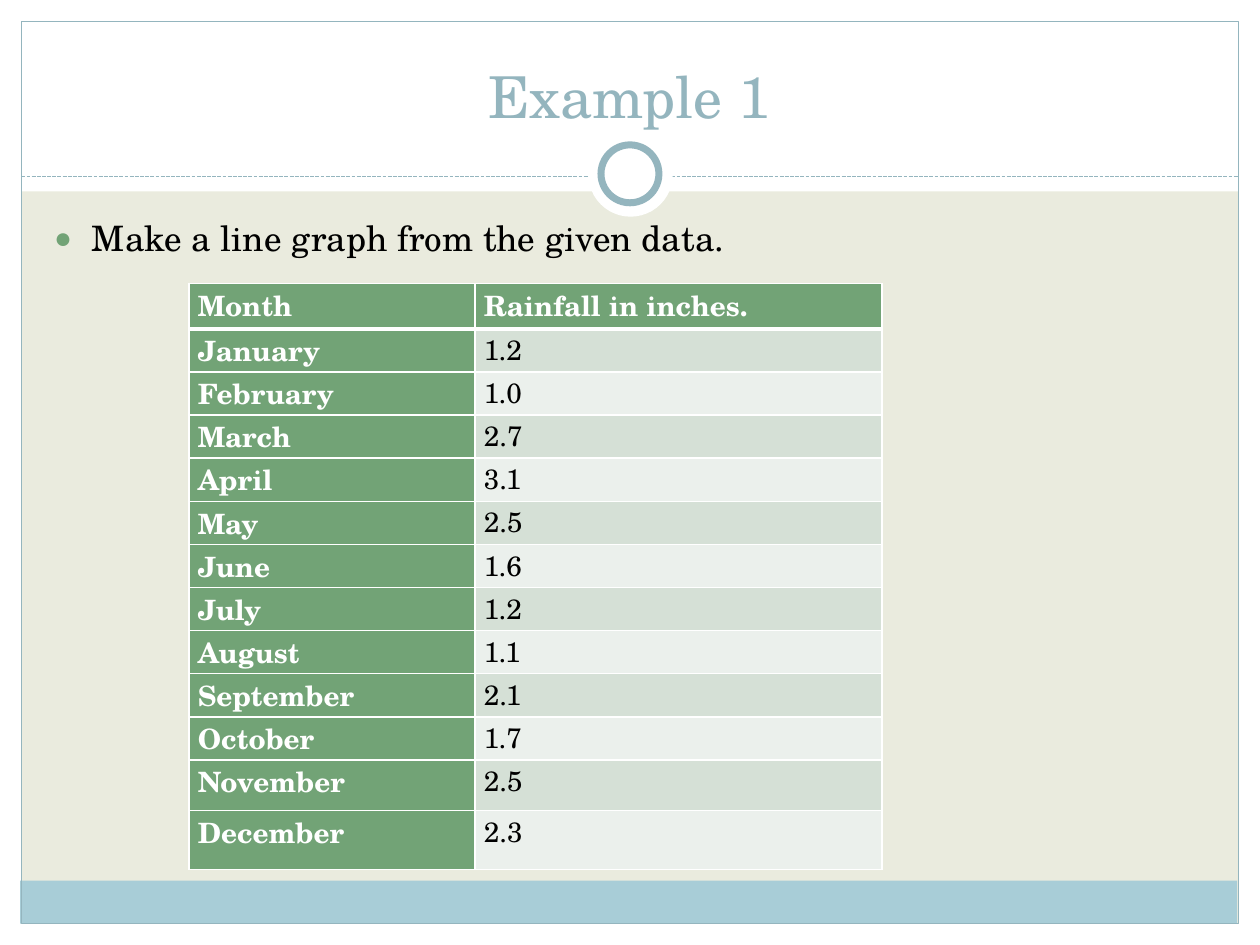
from lxml.etree import SubElement
from pptx import Presentation
from pptx.dml.color import RGBColor
from pptx.enum.dml import MSO_LINE
from pptx.enum.shapes import MSO_CONNECTOR, MSO_SHAPE
from pptx.enum.text import MSO_ANCHOR, MSO_AUTO_SIZE, PP_ALIGN
from pptx.oxml.ns import qn
from pptx.util import Inches, Pt

FONT = "TeX Gyre Schola"
WHITE, BLACK = "FFFFFF", "000000"
TEAL, PALE_TEAL = "94B5BE", "A8CDD7"
GREEN, BAND_DARK, BAND_LIGHT = "72A376", "D5E0D6", "EBF0EC"
PAPER = "EAEBDE"

RAINFALL = [
    ("Month", "Rainfall in inches."),
    ("January", "1.2"),
    ("February", "1.0"),
    ("March", "2.7"),
    ("April", "3.1"),
    ("May", "2.5"),
    ("June", "1.6"),
    ("July", "1.2"),
    ("August", "1.1"),
    ("September", "2.1"),
    ("October", "1.7"),
    ("November", "2.5"),
    ("December", "2.3"),
]
COLUMN_WIDTHS = [2.27, 3.23]
ROW_HEIGHTS = [0.36] + [0.34] * 10 + [0.4, 0.47]


def paint(color_format, color):
    color_format.rgb = RGBColor.from_string(color)


def fill_with(fill, color):
    fill.solid()
    paint(fill.fore_color, color)


def format_text(paragraph, size, color, bold=False):
    for run in paragraph.runs:
        run.font.name = FONT
        run.font.size = Pt(size)
        run.font.bold = bold
        paint(run.font.color, color)


def add_panel(slide, kind, box, fill=None, line=None, width=0.75):
    panel = slide.shapes.add_shape(kind, *map(Inches, box))
    panel.shadow.inherit = False
    if fill:
        fill_with(panel.fill, fill)
    else:
        panel.fill.background()
    if line:
        paint(panel.line.color, line)
        panel.line.width = Pt(width)
    else:
        panel.line.fill.background()


def add_divider(slide, left, right, y):
    divider = slide.shapes.add_connector(
        MSO_CONNECTOR.STRAIGHT, Inches(left), Inches(y), Inches(right), Inches(y))
    paint(divider.line.color, TEAL)
    divider.line.width = Pt(0.75)
    divider.line.dash_style = MSO_LINE.SQUARE_DOT
    SubElement(divider._element.spPr, qn("a:effectLst"))


def add_frame(slide):
    for margin in [(0, 7.33, 10, 0.17), (0, 0, 10, 1.52),
                   (0, 0, 0.17, 7.5), (9.83, 0, 0.17, 7.5)]:
        add_panel(slide, MSO_SHAPE.RECTANGLE, margin, WHITE)
    add_panel(slide, MSO_SHAPE.RECTANGLE, (0.16, 6.99, 9.66, 0.34), PALE_TEAL)
    add_panel(slide, MSO_SHAPE.RECTANGLE, (0.17, 0.17, 9.66, 7.16), line=TEAL)
    add_divider(slide, 0.17, 9.83, 1.4)
    add_panel(slide, MSO_SHAPE.OVAL, (4.67, 1.05, 0.67, 0.67), WHITE)
    add_panel(slide, MSO_SHAPE.OVAL, (4.77, 1.15, 0.46, 0.46), WHITE, TEAL, 4)


def place_text(slide, placeholder, box, text, anchor):
    slide.shapes._spTree.append(placeholder._element)
    placeholder.left, placeholder.top, placeholder.width, placeholder.height = map(Inches, box)
    frame = placeholder.text_frame
    frame.text = text
    frame.word_wrap = True
    frame.auto_size = MSO_AUTO_SIZE.NONE
    frame.vertical_anchor = anchor
    return frame.paragraphs[0]


def add_bullet(paragraph, color):
    properties = paragraph._p.get_or_add_pPr()
    properties.set("marL", str(Inches(0.3)))
    properties.set("indent", str(Inches(-0.3)))
    bullet_color = SubElement(properties, qn("a:buClr"))
    SubElement(bullet_color, qn("a:srgbClr"), val=color)
    SubElement(properties, qn("a:buSzPct"), val="85000")
    SubElement(properties, qn("a:buChar"), char="●")


def add_borders(cell, widths):
    properties = cell._tc.get_or_add_tcPr()
    for side, width in widths.items():
        border = SubElement(properties, qn(f"a:ln{side}"), w=str(Pt(width)))
        border_fill = SubElement(border, qn("a:solidFill"))
        SubElement(border_fill, qn("a:srgbClr"), val=WHITE)


def format_cell(cell, text, row, column):
    cell.margin_left = cell.margin_right = Inches(0.07)
    cell.margin_top = cell.margin_bottom = 0
    add_borders(cell, {"L": 1, "R": 1, "T": 3 if row == 1 else 1, "B": 3 if row == 0 else 1})
    heading = row == 0 or column == 0
    band = BAND_DARK if row % 2 else BAND_LIGHT
    fill_with(cell.fill, GREEN if heading else band)
    cell.text_frame.text = text
    format_text(cell.text_frame.paragraphs[0], 16, WHITE if heading else BLACK, heading)


def add_rainfall_table(slide):
    table = slide.shapes.add_table(
        len(RAINFALL), len(COLUMN_WIDTHS), Inches(1.5), Inches(2.25),
        Inches(sum(COLUMN_WIDTHS)), Inches(sum(ROW_HEIGHTS))).table
    for column, width in zip(table.columns, COLUMN_WIDTHS):
        column.width = Inches(width)
    for row, height in zip(table.rows, ROW_HEIGHTS):
        row.height = Inches(height)
    for row, entries in enumerate(RAINFALL):
        for column, text in enumerate(entries):
            format_cell(table.cell(row, column), text, row, column)


def main():
    presentation = Presentation()
    presentation.slide_width = Inches(10)
    presentation.slide_height = Inches(7.5)
    slide = presentation.slides.add_slide(presentation.slide_layouts[1])
    fill_with(slide.background.fill, PAPER)
    add_frame(slide)

    title = place_text(slide, slide.shapes.title, (0.33, 0.25, 9.33, 0.83),
                       "Example 1", MSO_ANCHOR.BOTTOM)
    title.alignment = PP_ALIGN.CENTER
    format_text(title, 33, TEAL)

    task = place_text(slide, slide.placeholders[1], (0.33, 1.67, 9.3, 5),
                      "Make a line graph from the given data.", MSO_ANCHOR.TOP)
    task.space_before = Pt(4)
    add_bullet(task, GREEN)
    format_text(task, 20, BLACK)

    add_rainfall_table(slide)
    presentation.save("out.pptx")


if __name__ == "__main__":
    main()
